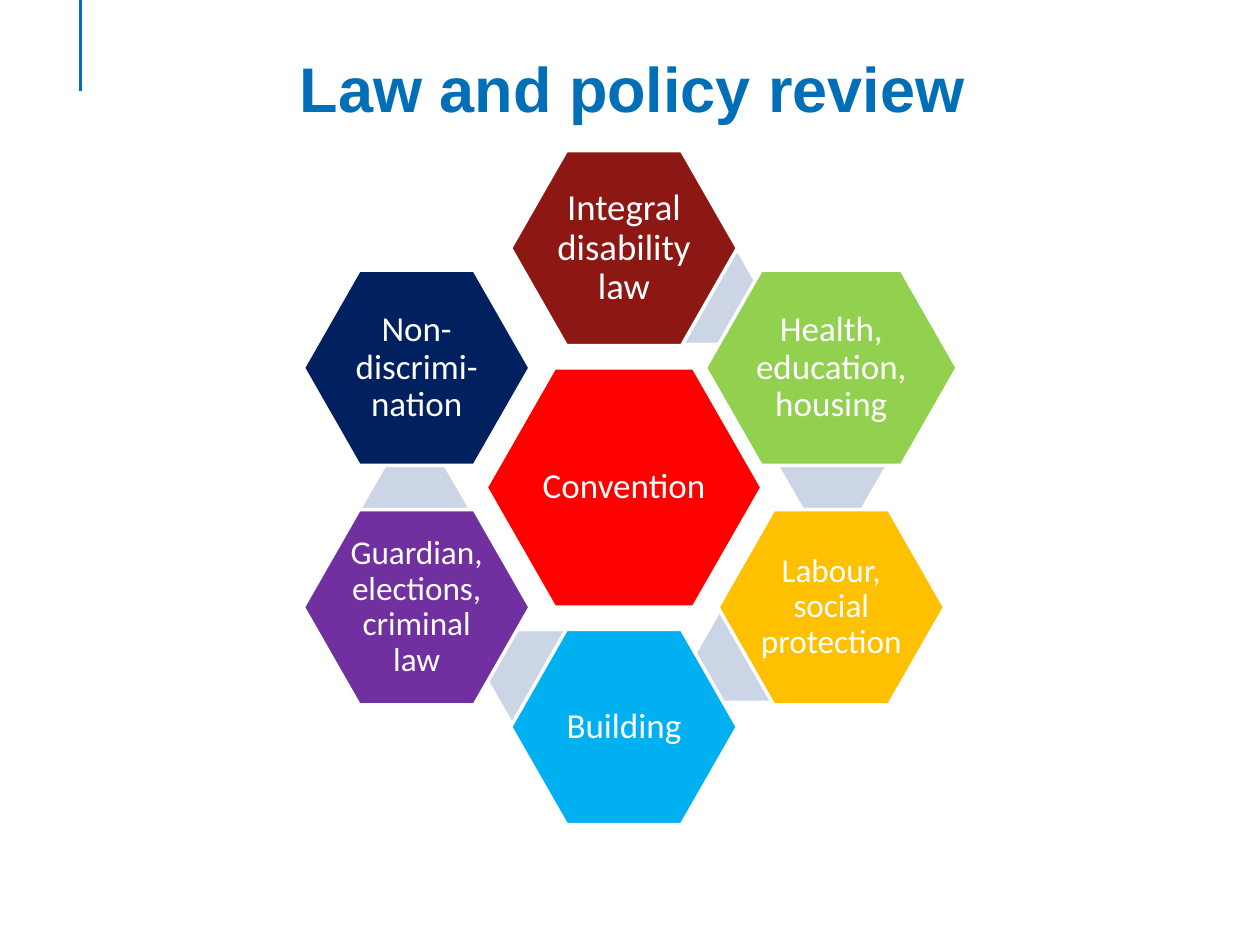
from math import cos, radians, sin

from lxml.etree import SubElement
from pptx import Presentation
from pptx.dml.color import RGBColor
from pptx.enum.shapes import MSO_CONNECTOR as Connector, MSO_SHAPE as Preset
from pptx.enum.text import MSO_ANCHOR as Anchor, PP_ALIGN as Align
from pptx.oxml.ns import qn
from pptx.util import Pt

BLUE = RGBColor(0x00, 0x6F, 0xB7)
WHITE = RGBColor(0xFF, 0xFF, 0xFF)
RED = RGBColor(0xFF, 0x00, 0x00)
MAROON = RGBColor(0x8C, 0x17, 0x13)
GREEN = RGBColor(0x92, 0xD0, 0x50)
AMBER = RGBColor(0xFF, 0xC0, 0x00)
SKY = RGBColor(0x00, 0xB0, 0xF0)
PURPLE = RGBColor(0x70, 0x30, 0xA0)
NAVY = RGBColor(0x00, 0x20, 0x60)
PALE = RGBColor(0xCC, 0xD5, 0xE6)

HUB_SIZE = (157.7, 136.8)
TOPIC_SIZE = (129.6, 111.6)
WIDE_TOPIC_SIZE = (144, 111.6)
TAB_SIZE = (59.8, 51.1)
RING_RADIUS = 136.8

TOPICS = [
    ("Integral disability law", 21, MAROON, TOPIC_SIZE, (49.8, -108.3)),
    ("Health, education, housing", 20, GREEN, WIDE_TOPIC_SIZE, (119, -11.8)),
    ("Labour, social protection", 19, AMBER, TOPIC_SIZE, (70.7, 96.2)),
    ("Building", 20, SKY, TOPIC_SIZE, (-48.8, 107.7)),
    ("Guardian, elections, criminal law", 19, PURPLE, TOPIC_SIZE, (-119.4, 11.2)),
    ("Non-discrimi-nation", 20, NAVY, TOPIC_SIZE, None),
]


def set_values(target, values):
    for name, value in values.items():
        setattr(target, name, value)


def write_text(shape, text, frame_format, font_format, color, line_spacing=1):
    frame = shape.text_frame
    set_values(frame, {"word_wrap": True, **frame_format})
    paragraph = frame.paragraphs[0]
    set_values(paragraph, {"alignment": Align.CENTER, "line_spacing": line_spacing})
    run = paragraph.add_run()
    run.text = text
    set_values(run.font, font_format)
    run.font.color.rgb = color


def add_hexagon(slide, center, size, color, point):
    (x, y), (width, height) = center, size
    shape = slide.shapes.add_shape(
        Preset.HEXAGON, Pt(x - width / 2), Pt(y - height / 2), Pt(width), Pt(height)
    )
    shape.shadow.inherit = False
    shape.adjustments[0] = point
    shape.fill.solid()
    shape.fill.fore_color.rgb = color
    shape.line.fill.background()
    return shape


def add_topic(slide, center, size, color, text, font_size):
    shape = add_hexagon(slide, center, size, color, 0.286)
    shape.line.color.rgb = WHITE
    shape.line.width = Pt(2)
    margins = {f"margin_{side}": Pt(1) for side in ("left", "top", "right", "bottom")}
    write_text(
        shape,
        text,
        {"vertical_anchor": Anchor.MIDDLE, **margins},
        {"name": "Calibri", "size": Pt(font_size)},
        WHITE,
        0.9,
    )


def add_hexagon_ring(slide, left, top, width, height):
    hub_x, hub_y = left + width / 2, top + height / 2
    add_topic(slide, (hub_x, hub_y), HUB_SIZE, RED, "Convention", 20)
    for index, (text, font_size, color, size, tab) in enumerate(TOPICS):
        if tab:
            add_hexagon(slide, (hub_x + tab[0], hub_y + tab[1]), TAB_SIZE, PALE, 0.289)
        angle = radians(60 * index)
        center = (hub_x + RING_RADIUS * sin(angle), hub_y - RING_RADIUS * cos(angle))
        add_topic(slide, center, size, color, text, font_size)


def add_accent_line(slide, left, top, height):
    line = slide.shapes.add_connector(
        Connector.STRAIGHT, Pt(left), Pt(top), Pt(left), Pt(top + height)
    )
    line.line.color.rgb = BLUE
    line.line.width = Pt(2)
    SubElement(line._element.spPr, qn("a:effectLst"))


def add_title(slide, left, top, width, height):
    box = slide.shapes.add_textbox(Pt(left), Pt(top), Pt(width), Pt(height))
    write_text(
        box,
        "Law and policy review",
        {"vertical_anchor": Anchor.TOP, "margin_top": Pt(6.8)},
        {"name": "Arial", "size": Pt(36), "bold": True},
        BLUE,
    )


def main():
    presentation = Presentation()
    presentation.slide_width = Pt(720)
    presentation.slide_height = Pt(540)
    slide = presentation.slides.add_slide(presentation.slide_layouts[6])
    add_accent_line(slide, 46.1, 0, 51.8)
    add_title(slide, 33.1, 21.6, 656.6, 85.7)
    add_hexagon_ring(slide, 166.6, 86.6, 380, 384)
    presentation.save("out.pptx")


if __name__ == "__main__":
    main()
